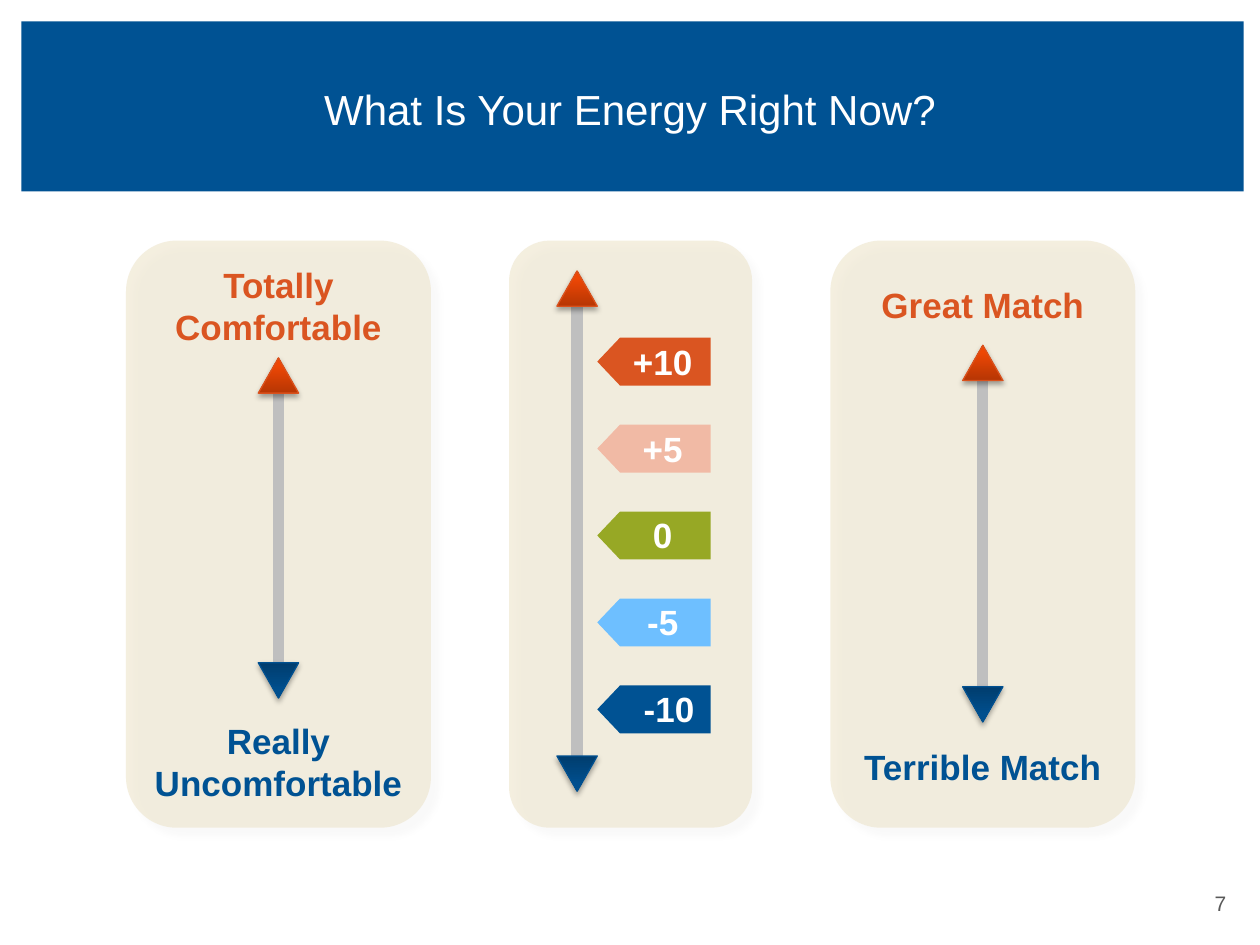
from lxml import etree
from pptx import Presentation
from pptx.dml.color import RGBColor
from pptx.enum.shapes import MSO_CONNECTOR, MSO_SHAPE
from pptx.enum.text import MSO_ANCHOR, PP_ALIGN
from pptx.oxml.ns import qn
from pptx.util import Inches, Pt

LINE = MSO_CONNECTOR.STRAIGHT
RECT, ROUND = MSO_SHAPE.RECTANGLE, MSO_SHAPE.ROUNDED_RECTANGLE
TRI, TAG = MSO_SHAPE.ISOSCELES_TRIANGLE, MSO_SHAPE.FLOWCHART_OFFPAGE_CONNECTOR
MID, TOP = MSO_ANCHOR.MIDDLE, MSO_ANCHOR.TOP
MIDDLE, RIGHT = PP_ALIGN.CENTER, PP_ALIGN.RIGHT

W, H = 10, 7.5
TITLE = "What Is Your Energy Right Now?"
NAVY, RUST, WHITE, GREY, SAND = "005293", "DA5521", "FFFFFF", "BFBFBF", "EDE4CA"
WARM = ("DA511C", [(0, "B73604"), (80, "EE4705"), (100, "F44501")])
COOL = ("005090", [(0, "003D6E"), (80, "004F8E"), (100, "00508F")])
PANELS = [
    {"wide": 2.42, "axis": 1.21, "ends": (2.84, 5.54),
     "high": ("Totally Comfortable", 2.04, 0.77), "low": ("Really Uncomfortable", 5.66, 0.77)},
    {"wide": 1.93, "axis": 0.54, "ends": (2.15, 6.28)},
    {"wide": 2.42, "axis": 1.21, "ends": (2.74, 5.73),
     "high": ("Great Match", 2.2, 0.44), "low": ("Terrible Match", 5.87, 0.44)},
]
TAGS = [("+10", RUST, 5.26), ("+5", "F1BAA5", 5.26), ("0", "97A825", 5.26),
        ("-5", "6EBFFF", 5.26), ("-10", NAVY, 5.31)]
LEFT, PTOP, TALL, GAP = 1, 1.91, 4.66, 0.62
TRI_W, TRI_H = 0.32, 0.28
TAG_X, TAG_Y, STEP, TAG_W, TAG_H = 5.19, 2.87, 0.69, 0.38, 0.9

deck = Presentation()
deck.slide_width, deck.slide_height = Inches(W), Inches(H)
slide = deck.slides.add_slide(deck.slide_layouts[5])


def rgb(code):
    """Turn a hex string into a colour."""
    return RGBColor.from_string(code)


def node(top, tag, **attrs):
    """Add an XML child with attributes."""
    return etree.SubElement(top, qn(tag), {k: str(v) for k, v in attrs.items()})


def tint(top, code, part):
    """Add a colour with an opacity in percent."""
    node(node(top, "a:srgbClr", val=code), "a:alpha", val=part * 1000)


def shape(kind, x, y, w, h, fill, edge=None, turn=0, shade=None):
    """Add a shape with a flat or graded fill and an optional shadow."""
    item = slide.shapes.add_shape(kind, Inches(x), Inches(y), Inches(w), Inches(h))
    item.rotation = turn
    item.shadow.inherit = False
    props = item._element.spPr
    if isinstance(fill, str):
        item.fill.solid()
        item.fill.fore_color.rgb = rgb(fill)
    else:
        item.fill.gradient()
        item.fill.gradient_angle = 90
        stops = props.find(".//" + qn("a:gsLst"))
        for old in list(stops):
            stops.remove(old)
        for pos, code in fill:
            node(node(stops, "a:gs", pos=pos * 1000), "a:srgbClr", val=code)
    if edge:
        item.line.color.rgb = rgb(edge)
        item.line.width = Pt(0.75)
    else:
        item.line.fill.background()
    if shade:
        part, blur, dist, angle = shade
        cast = node(props.find(qn("a:effectLst")), "a:outerShdw", blurRad=Pt(blur),
                    dist=Pt(dist), dir=angle * 60000, algn="ctr", rotWithShape=0)
        tint(cast, "000000", part)
    return item


def write(text, x, y, w, h, box=None, size=20, color=WHITE, bold=True,
          align=MIDDLE, anchor=TOP):
    """Write text in a new box or a given placeholder."""
    if box is None:
        box = slide.shapes.add_textbox(0, 0, 0, 0)
    box.left, box.top, box.width, box.height = map(Inches, (x, y, w, h))
    frame = box.text_frame
    frame.word_wrap, frame.vertical_anchor = True, anchor
    para = frame.paragraphs[0]
    para.alignment = align
    run = para.add_run()
    run.text = text
    font = run.font
    font.name, font.size, font.bold = "Arial", Pt(size), bold
    font.color.rgb = rgb(color)


def arrow(x, top, base):
    """Draw a grey axis with a warm head and a cool foot."""
    bar = slide.shapes.add_connector(LINE, Inches(x), Inches(top + TRI_H),
                                     Inches(x), Inches(base - TRI_H))
    bar.line.color.rgb = rgb(GREY)
    bar.line.width = Pt(6.5)
    node(bar._element.spPr, "a:effectLst")
    for y, (edge, grade), turn in ((top, WARM, 0), (base - TRI_H, COOL, 180)):
        shape(TRI, x - TRI_W / 2, y, TRI_W, TRI_H, grade, edge, turn, (35, 3.1, 1.8, 90))


def panel(x, wide, axis, ends, high=None, low=None):
    """Draw one rounded panel with its axis and end labels."""
    card = shape(ROUND, x, PTOP, wide, TALL, SAND, shade=(3, 4, 6, 45))
    paint = card._element.spPr.find(qn("a:solidFill"))
    paint.clear()
    tint(paint, SAND, 59)
    arrow(x + axis, *ends)
    for label, span, color in ((high, 2.08, RUST), (low, 2.27, NAVY)):
        if label:
            text, y, h = label
            write(text, x + (wide - span) / 2, y, span, h, color=color)


def main():
    """Build and save the slide."""
    band = shape(RECT, 0.17, 0.17, 9.7, 1.35, NAVY)
    title = slide.shapes.title
    title._element.addprevious(band._element)
    write(TITLE, 0.5, 0.3, 9, 1.12, box=title, size=24, bold=False, anchor=MID)
    x = LEFT
    for data in PANELS:
        panel(x, **data)
        x += data["wide"] + GAP
    for i, (text, color, mid) in enumerate(TAGS):
        y = TAG_Y + i * STEP
        shape(TAG, TAG_X - TAG_W / 2, y - TAG_H / 2, TAG_W, TAG_H, color, turn=90)
        write(text, mid - 0.38, y - 0.22, 0.76, 0.44)
    write("7", 7.5, 7.02, 2.33, 0.32, size=12, color="595959", bold=False, align=RIGHT)
    deck.save("out.pptx")


if __name__ == "__main__":
    main()
